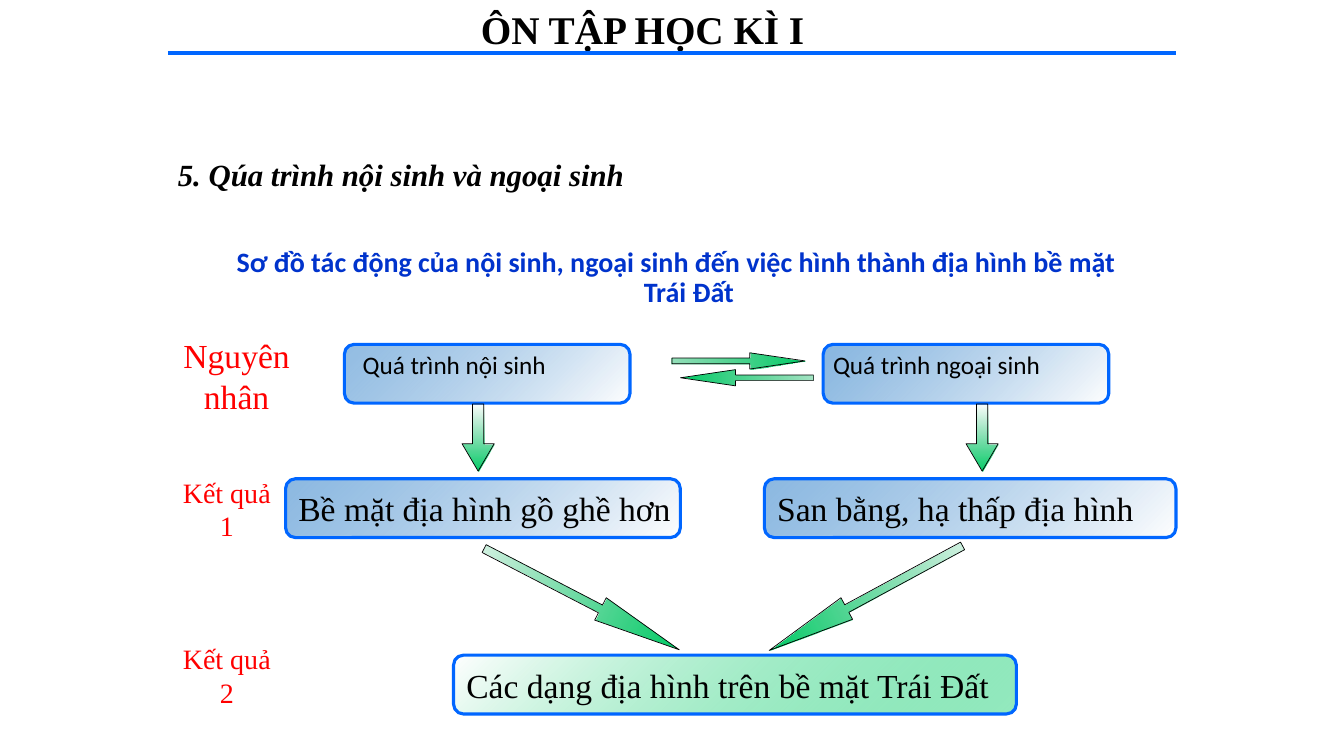
from pptx import Presentation
from pptx.dml.color import RGBColor
from pptx.enum import shapes, text
from pptx.oxml import ns
from pptx.util import Pt

SERIF, SANS = "Times New Roman", "Calibri"
BLACK, RED, BLUE, NAVY = "000000", "FF0000", "0066FF", "0033CC"
SKY, WHITE, LEAF, MINT = "5B9BD5", "FFFFFF", "00B65B", "00CC66"
ROW = 42  # height of every box in the diagram


def paint(color, code):
    color.rgb = RGBColor.from_string(code)


def write(shape, words, size, code=BLACK, font=SERIF, bold=False,
          slant=False, center=False, wrap=True, hang=0, lead=None):
    frame = shape.text_frame
    frame.word_wrap = wrap
    para = frame.paragraphs[0]
    para.alignment = text.PP_ALIGN.CENTER if center else text.PP_ALIGN.LEFT
    para.line_spacing = lead
    if hang:
        props = para._p.get_or_add_pPr()
        props.set("marL", str(Pt(hang)))
        props.set("indent", str(-Pt(hang)))
    run = para.add_run()
    run.text = words
    run.font.size, run.font.name = Pt(size), font
    run.font.bold, run.font.italic = bold, slant
    paint(run.font.color, code)


def note(slide, x, y, w, h, words, size, **look):
    area = slide.shapes.add_textbox(Pt(x), Pt(y), Pt(w), Pt(h))
    write(area, words, size, **look)


def blend(shape, stops, angle):
    """Fill with two (colour, opacity percent) stops."""
    shape.fill.gradient()
    shape.fill.gradient_angle = angle
    for stop, (code, _) in zip(shape.fill.gradient_stops, stops):
        paint(stop.color, code)
    marks = list(shape._element.spPr.iter(ns.qn("a:srgbClr")))
    for mark, (_, level) in zip(marks, stops):
        if level < 100:
            alpha = mark.makeelement(ns.qn("a:alpha"), {"val": str(level * 1000)})
            mark.append(alpha)


def form(slide, kind, box, stops, angle, edge, width):
    shape = slide.shapes.add_shape(kind, *map(Pt, box))
    shape.shadow.inherit = False
    blend(shape, stops, angle)
    paint(shape.line.color, edge)
    shape.line.width = Pt(width)
    return shape


def panel(slide, x, y, w, stops, words=""):
    shape = form(slide, shapes.MSO_SHAPE.ROUNDED_RECTANGLE,
                 (x, y, w, ROW), stops, 315, BLUE, 2.25)
    if words:
        shape.text_frame.vertical_anchor = text.MSO_ANCHOR.MIDDLE
        write(shape, words, 24, wrap=False)


def arrow(slide, x, y, w, h, turn, tip, level):
    shape = form(slide, shapes.MSO_SHAPE.RIGHT_ARROW, (x, y, w, h),
                 [(LEAF, level), (MINT, 100)], 0, BLACK, 0.5)
    shape.adjustments[0], shape.adjustments[1] = 0.35, tip
    shape.rotation = turn


def head(slide, x, y, w):
    """Title, rule, section heading and diagram caption."""
    note(slide, x + 108, y, 462, 41, "ÔN TẬP HỌC KÌ I", 28, bold=True, center=True)
    rule = slide.shapes.add_connector(
        shapes.MSO_CONNECTOR.STRAIGHT, Pt(x), Pt(y + 38), Pt(x + w), Pt(y + 38))
    paint(rule.line.color, BLUE)
    rule.line.width = Pt(3)
    props = rule._element.spPr
    props.append(props.makeelement(ns.qn("a:effectLst"), {}))
    note(slide, x, y + 108, 612, 34, "5. Qúa trình nội sinh và ngoại sinh", 22,
         bold=True, slant=True, hang=36)
    note(slide, x + 30, y + 174, w - 54, 66,
         "Sơ đồ tác động của nội sinh, ngoại sinh đến việc hình thành "
         "địa hình bề mặt Trái Đất",
         20, code=NAVY, font=SANS, bold=True, center=True, hang=18, lead=0.9)


def cause(slide, x, y):
    """Two processes acting on each other, with arrows down."""
    note(slide, x - 2, y - 10, 102, 66, "Nguyên nhân", 24, code=RED, center=True)
    for left, pad, w, level, words in (
            (x + 126, 6, 147, 66, "Quá trình nội sinh"),
            (x + 468, 0, 164, 72, "Quá trình ngoại sinh")):
        panel(slide, left, y, 204, [(SKY, level), (WHITE, 100)])
        note(slide, left + pad, y, w, 29, words, 18, font=SANS, wrap=False)
    for left in (x + 197.5, x + 557.5):
        arrow(slide, left, y + 55, 48, 23, 90, 0.85, 0)
    arrow(slide, x + 360, y + 6, 95, 11.6, 0, 3.4, 42)
    arrow(slide, x + 366, y + 18, 95, 11.6, 180, 3.4, 36)


def effect(slide, x, y):
    """First results, with arrows converging below."""
    note(slide, x, y - 6, 84, 55, "Kết quả 1", 20, code=RED, center=True)
    for left, w, words in ((x + 84, 282, "Bề mặt địa hình gồ ghề hơn"),
                           (x + 426, 294, "San bằng, hạ thấp địa hình")):
        panel(slide, left, y, w, [(SKY, 70), (WHITE, 100)], words)
    arrow(slide, x + 217, y + 77, 157, 18, 27.4, 3.52, 18)
    arrow(slide, x + 420, y + 76.5, 157, 17.5, 151.6, 3.6, 18)


def final(slide, x, y):
    note(slide, x, y - 13, 84, 55, "Kết quả 2", 20, code=RED, center=True)
    panel(slide, x + 204, y, 402, [(WHITE, 100), (MINT, 42)],
          "Các dạng địa hình trên bề mặt Trái Đất")


def main():
    deck = Presentation()
    deck.slide_width, deck.slide_height = Pt(960), Pt(540)
    slide = deck.slides.add_slide(deck.slide_layouts[6])
    left = 120
    head(slide, left, 0, 720)
    cause(slide, left, 246)
    effect(slide, left, 342)
    final(slide, left, 468)
    deck.save("out.pptx")


if __name__ == "__main__":
    main()
